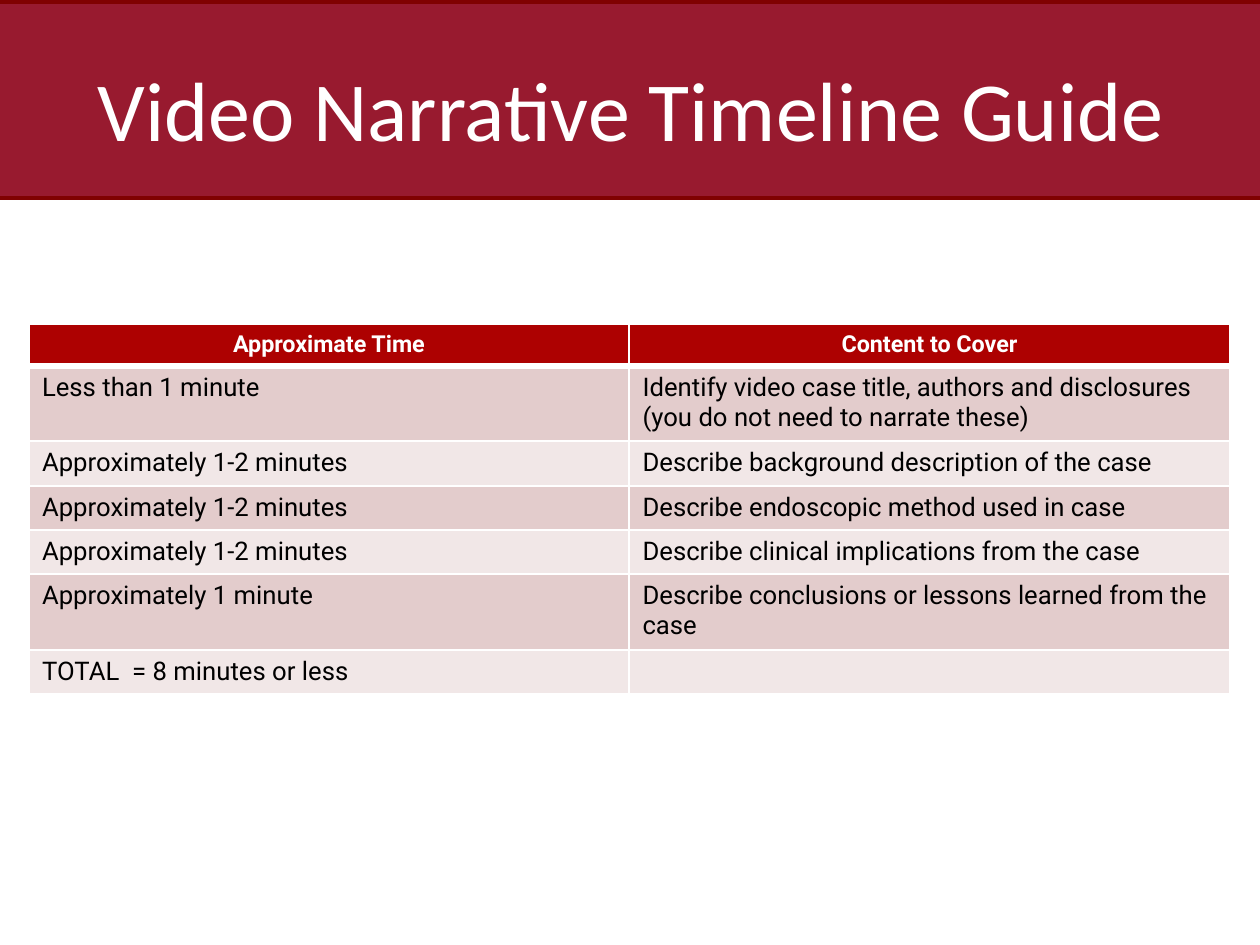
from lxml.etree import SubElement
from pptx import Presentation
from pptx.dml.color import RGBColor
from pptx.enum.shapes import MSO_SHAPE as Shape
from pptx.enum.text import MSO_ANCHOR as Anchor, PP_ALIGN as Align
from pptx.oxml.ns import qn
from pptx.util import Inches, Pt

WHITE = RGBColor(0xFF, 0xFF, 0xFF)
BLACK = RGBColor(0x00, 0x00, 0x00)
CRIMSON = RGBColor(0x98, 0x1A, 0x2F)
MAROON = RGBColor(0x80, 0x01, 0x01)
HEADER_RED = RGBColor(0xAD, 0x01, 0x01)
BAND_DARK = RGBColor(0xE3, 0xCC, 0xCC)
BAND_LIGHT = RGBColor(0xF1, 0xE7, 0xE7)

TIMELINE = [
    ("Approximate Time", "Content to Cover"),
    ("Less than 1 minute",
     "Identify video case title, authors and disclosures (you do not need to narrate these)"),
    ("Approximately 1-2 minutes", "Describe background description of the case"),
    ("Approximately 1-2 minutes", "Describe endoscopic method used in case"),
    ("Approximately 1-2 minutes", "Describe clinical implications from the case"),
    ("Approximately 1 minute", "Describe conclusions or lessons learned from the case"),
    ("TOTAL  = 8 minutes or less", ""),
]
ROW_HEIGHTS = [0.24, 0.45, 0.26, 0.26, 0.26, 0.45, 0.26]
TABLE_WIDTH = Inches(7.15)


def add_border(cell, side, points):
    line = SubElement(cell._tc.get_or_add_tcPr(), qn("a:" + side), w=str(Pt(points)))
    SubElement(SubElement(line, qn("a:solidFill")), qn("a:srgbClr"), val=str(WHITE))


# Slide in 4:3 format
deck = Presentation()
deck.slide_width = Inches(7.5)
deck.slide_height = deck.slide_width * 3 // 4
slide = deck.slides.add_slide(deck.slide_layouts[6])

# Title band, bleeding past both sides
band = slide.shapes.add_shape(
    Shape.RECTANGLE, Inches(-1.24), Inches(0.01), Inches(9.98), Inches(1.17))
band.shadow.inherit = False
band.fill.solid()
band.fill.fore_color.rgb = CRIMSON
band.line.color.rgb = MAROON
band.line.width = Pt(2)

# Title
title = slide.shapes.add_textbox(
    Inches(0.38), Inches(0.29), Inches(6.75), Inches(0.7)).text_frame
title.word_wrap = True
title.vertical_anchor = Anchor.MIDDLE
heading = title.paragraphs[0]
heading.text = "Video Narrative Timeline Guide"
heading.alignment = Align.CENTER
heading.font.name, heading.font.size = "Calibri", Pt(36)
heading.font.color.rgb = WHITE

# Timeline table with two equal columns
table = slide.shapes.add_table(
    len(TIMELINE), 2, Inches(0.17), Inches(1.93),
    TABLE_WIDTH, Inches(sum(ROW_HEIGHTS))).table

for r, (height, texts) in enumerate(zip(ROW_HEIGHTS, TIMELINE)):
    table.rows[r].height = Inches(height)
    is_header = r == 0
    size = Pt(10 if is_header else 11)
    for c, text in enumerate(texts):
        cell = table.cell(r, c)
        cell.margin_left = cell.margin_right = Inches(0.08)
        cell.margin_top = cell.margin_bottom = Inches(0.04)

        # Thin white grid, with a thick rule under the header
        add_border(cell, "lnL", 1)
        add_border(cell, "lnR", 1)
        add_border(cell, "lnT", 3 if r == 1 else 1)
        add_border(cell, "lnB", 3 if is_header else 1)
        cell.fill.solid()
        cell.fill.fore_color.rgb = (
            HEADER_RED if is_header else BAND_DARK if r % 2 else BAND_LIGHT)

        entry = cell.text_frame.paragraphs[0]
        entry.alignment = Align.CENTER if is_header else Align.LEFT
        entry.font.name, entry.font.size = "Roboto", size
        entry.font.bold = is_header
        entry.font.color.rgb = WHITE if is_header else BLACK
        if text:
            entry.text = text
        else:
            # An empty cell keeps the row height through its end mark
            SubElement(entry._p, qn("a:endParaRPr"), sz=str(int(size.pt * 100)))

deck.save("out.pptx")
